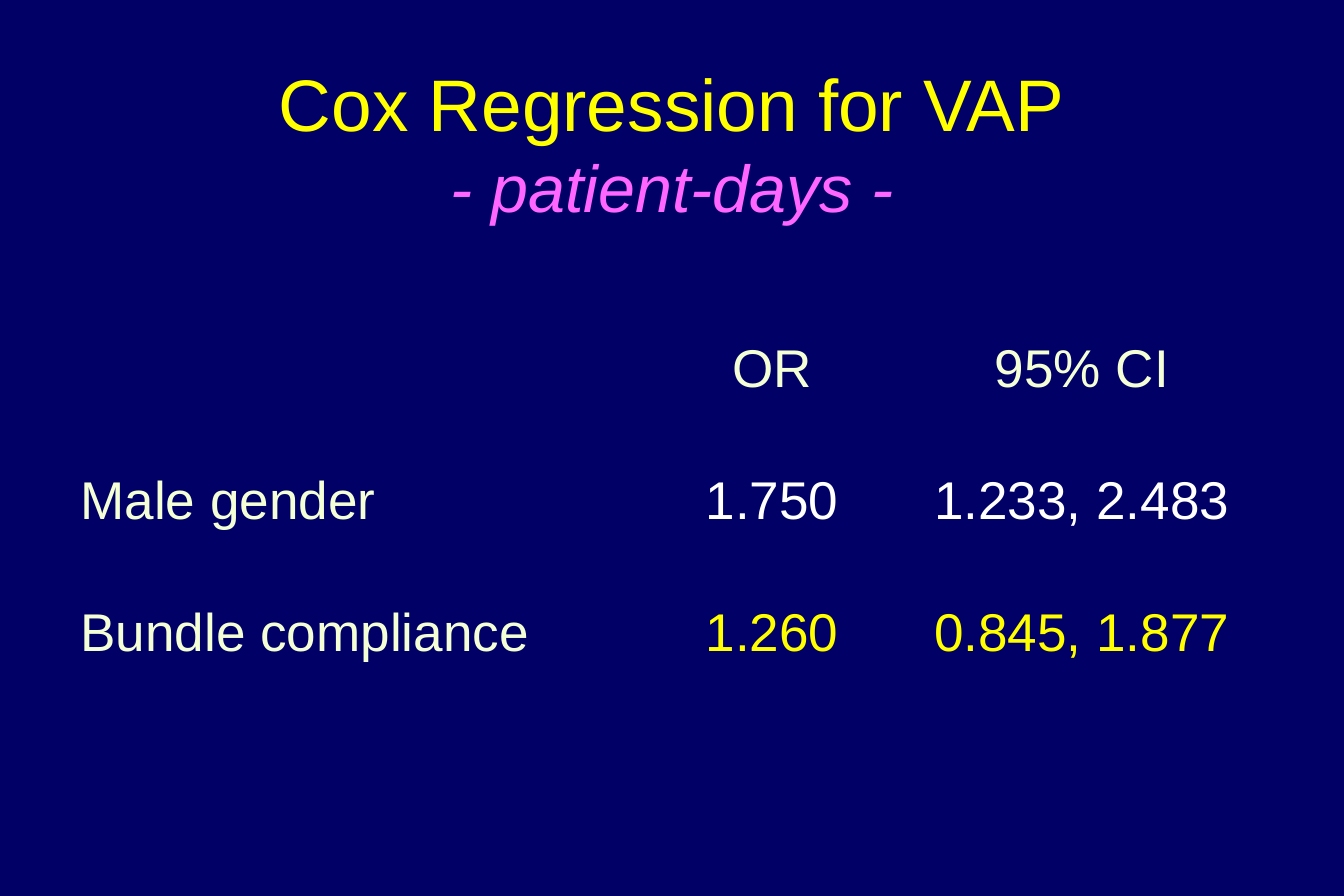
from pptx import Presentation
from pptx.dml.color import RGBColor
from pptx.enum.text import MSO_ANCHOR as Anchor, PP_ALIGN as Align
from pptx.util import Inches, Pt


def style(r, size, color, italic=False):
    r.font.name = "Arial"
    r.font.size = Pt(size)
    r.font.bold = False
    r.font.italic = italic
    r.font.color.rgb = RGBColor.from_string(color)


NAVY, YELLOW, PINK, CREAM, WHITE = "000066", "FFFF00", "FF66FF", "F5FFD6", "FFFFFF"
NO_STYLE = "{2D5ABB26-0587-4C30-8999-92F81FD0307C}"

prs = Presentation()
prs.slide_width, prs.slide_height = Inches(11.25), Inches(7.5)
s = prs.slides.add_slide(prs.slide_layouts[5])
s.background.fill.solid()
s.background.fill.fore_color.rgb = RGBColor.from_string(NAVY)

left = int(prs.slide_width * 0.05)
width = prs.slide_width - 2 * left

title = s.shapes.title
title.left, title.top, title.width, title.height = left, Inches(0.3), width, Inches(1.78)
tf = title.text_frame
tf.word_wrap = True
tf.vertical_anchor = Anchor.MIDDLE
p = tf.paragraphs[0]
p.text = "Cox Regression for VAP\v- patient-days -"
p.alignment = Align.CENTER
style(p.runs[0], 44, YELLOW)
style(p.runs[1], 40, PINK, italic=True)

rows = [
    (["", "OR", "95% CI"], CREAM),
    (["Male gender", "1.750", "1.233, 2.483"], WHITE),
    (["Bundle compliance", "1.260", "0.845, 1.877"], YELLOW),
]
col_widths = [4.94, 1.92, 3.27]

frame = s.shapes.add_table(len(rows), len(col_widths), left, Inches(2.54), width, Inches(3.31))
table = frame.table
table.first_row = table.horz_banding = False
table._tbl.tblPr.find("{*}tableStyleId").text = NO_STYLE
for col, w in zip(table.columns, col_widths):
    col.width = Inches(w)

for i, (texts, value_color) in enumerate(rows):
    for j, text in enumerate(texts):
        cell = table.cell(i, j)
        cell.fill.background()
        cell.vertical_anchor = Anchor.MIDDLE
        cell.margin_left = cell.margin_right = Inches(0.11)
        p = cell.text_frame.paragraphs[0]
        p.text = text
        p.alignment = Align.CENTER if j else Align.LEFT
        for r in p.runs:
            style(r, 32, value_color if j else CREAM)

prs.save("out.pptx")
